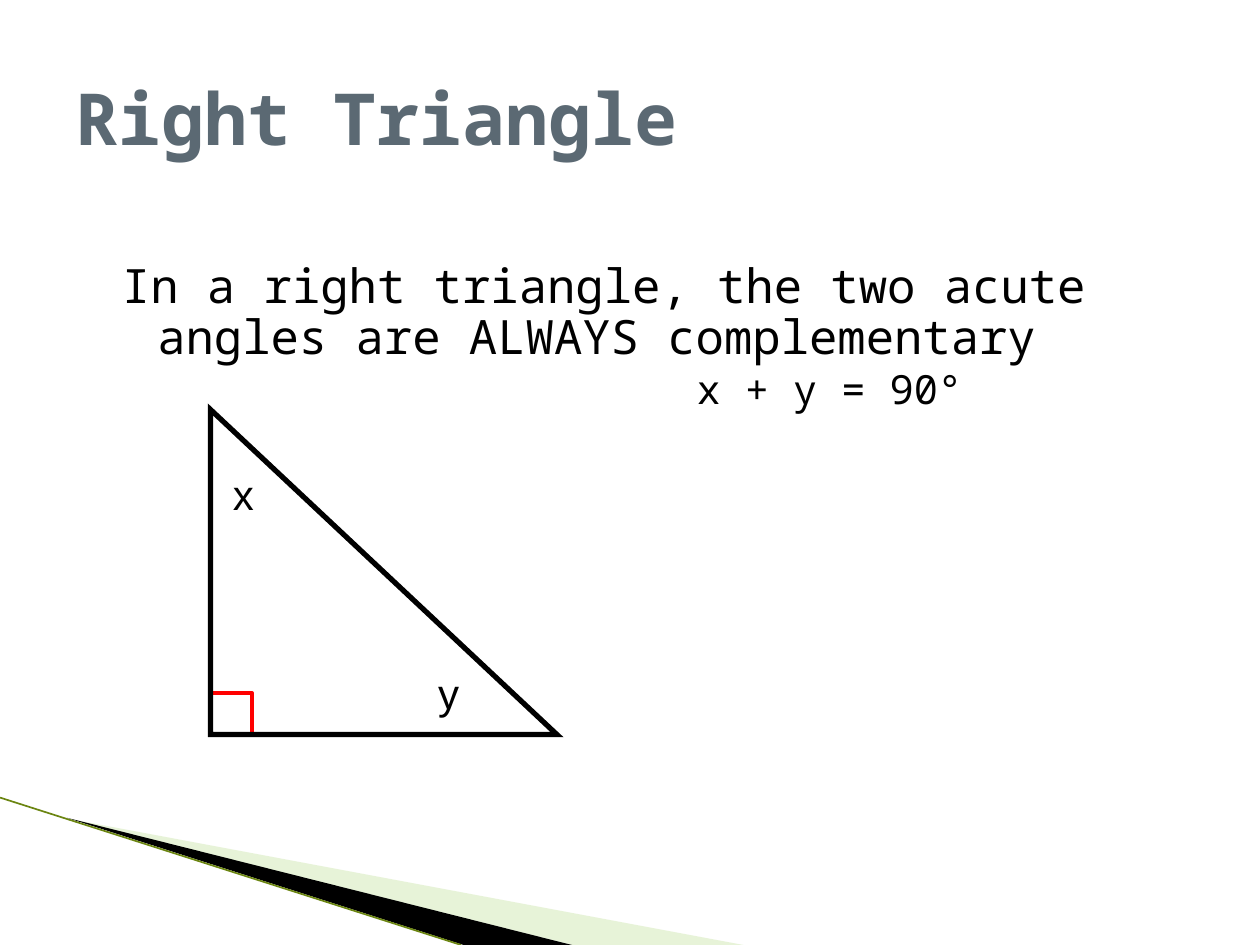
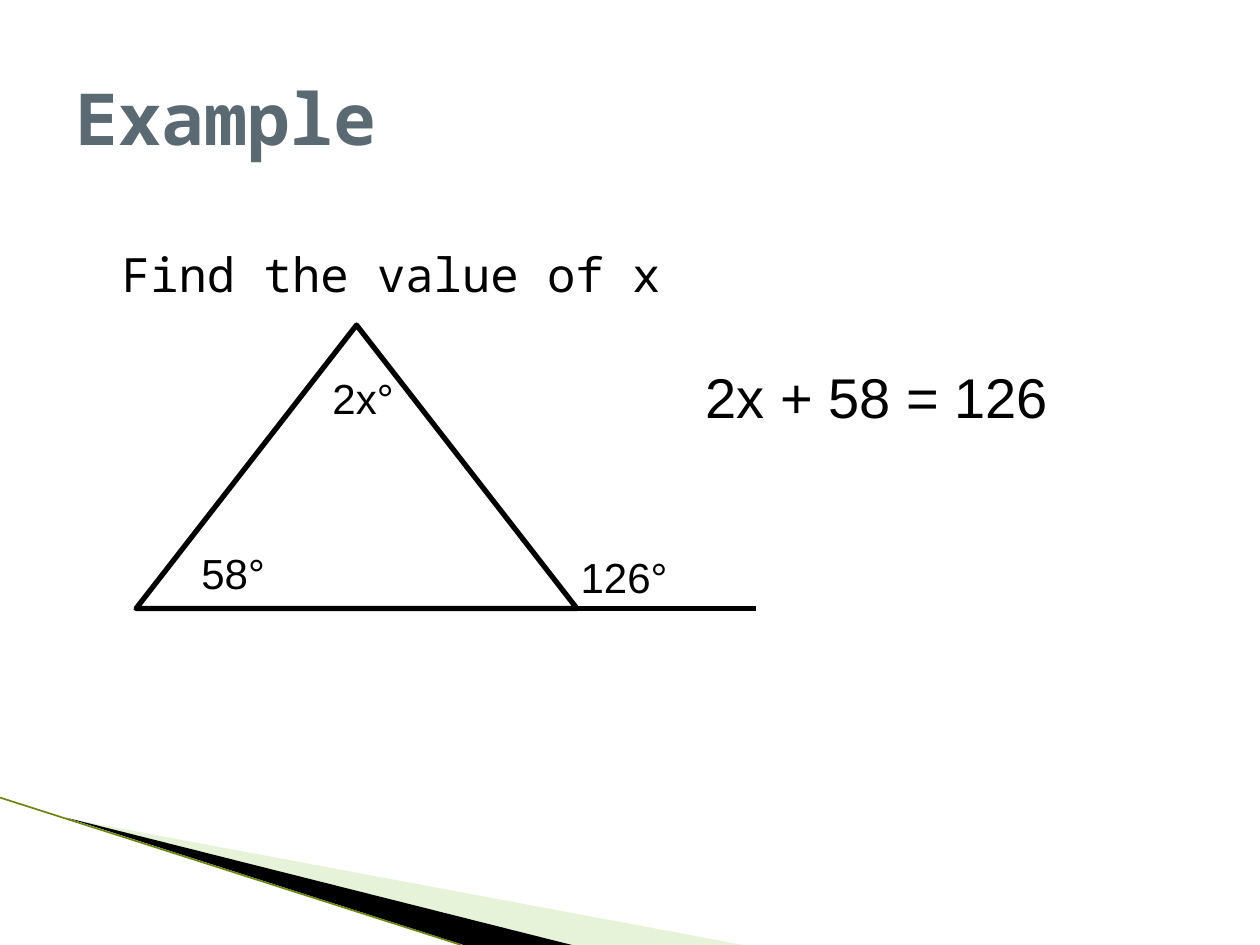
from lxml.etree import SubElement
from pptx import Presentation
from pptx.dml.color import RGBColor
from pptx.enum.shapes import MSO_CONNECTOR as CONNECTOR, MSO_SHAPE as SHAPE
from pptx.enum.text import MSO_ANCHOR as ANCHOR
from pptx.oxml.ns import qn
from pptx.util import Inches, Pt

COLORS = {"text": "000000", "title": "5B6973", "mark": "FF0000",
          "pale": "C5E19F", "band": "000000", "edge": "6B8511"}
MONO, SANS = "Noto Sans Mono", "Arial"


def rgb(name):
    return RGBColor.from_string(COLORS[name])


class Deck:
    """Holds the style and the current slide."""

    def __init__(self):
        self.prs = Presentation()
        self.prs.slide_width, self.prs.slide_height = Inches(10), Inches(7.5)

    def new_slide(self, title):
        self.shapes = self.prs.slides.add_slide(self.prs.slide_layouts[6]).shapes
        # Corner bands
        self.band([(0.55, 6.5), (5.9, 7.5), (4.54, 7.5)], "pale", 40)
        self.band([(0.53, 6.49), (4.54, 7.5), (3.68, 7.5)], "band")
        self.line((0, 6.33), (3.66, 7.5), "edge", 0.95)
        # Title
        heading = self.text(title, 0.5, 0.3, 9, 1.25, 41, MONO, "title", bold=True)
        heading.vertical_anchor = ANCHOR.MIDDLE

    def band(self, points, color, opacity=100):
        corners = [(Inches(x), Inches(y)) for x, y in points]
        builder = self.shapes.build_freeform(*corners[0])
        builder.add_line_segments(corners[1:], close=True)
        band = builder.convert_to_shape()
        band.shadow.inherit = False
        band.line.fill.background()
        band.fill.solid()
        band.fill.fore_color.rgb = rgb(color)
        if opacity < 100:
            fill = band.fill._xPr.find(qn("a:solidFill"))[0]
            SubElement(fill, qn("a:alpha"), val=str(opacity * 1000))

    def line(self, start, end, color="text", width=3):
        line = self.shapes.add_connector(
            CONNECTOR.STRAIGHT, *(Inches(v) for v in start + end))
        line.line.color.rgb = rgb(color)
        line.line.width = Pt(width)
        SubElement(line._element.spPr, qn("a:effectLst"))

    def outline(self, kind, left, top, width, height, color="text", weight=3, miter=False):
        figure = self.shapes.add_shape(
            kind, *map(Inches, (left, top, width, height)))
        figure.fill.background()
        figure.line.color.rgb = rgb(color)
        figure.line.width = Pt(weight)
        if miter:
            SubElement(figure.line._ln, qn("a:miter"), lim="800000")
        figure.shadow.inherit = False

    def style(self, paragraph, size, font, color="text", bold=False):
        for run in paragraph.runs:
            run.font.size, run.font.name, run.font.bold = Pt(size), font, bold
            run.font.color.rgb = rgb(color)

    def text(self, words, left, top, width, height, size=24, font=SANS,
             color="text", bold=False):
        box = self.shapes.add_textbox(*map(Inches, (left, top, width, height)))
        frame = box.text_frame
        frame.word_wrap = True
        frame.text = words
        self.style(frame.paragraphs[0], size, font, color, bold)
        return frame

    def body(self, words, left, top, width, height):
        frame = self.text(words, left, top, width, height, 27, MONO)
        frame.margin_top = Inches(0.09)
        self.indent(frame.paragraphs[0], 0.4, -0.28)
        return frame

    def indent(self, paragraph, left, first=0.0):
        paragraph.line_spacing = 0.89
        props = paragraph._p.get_or_add_pPr()
        props.set("marL", str(Inches(left)))
        props.set("indent", str(Inches(first)))


def right_triangle(deck):
    deck.new_slide("Right Triangle")
    left, base, corner = 1.67, 5.83, 0.33
    deck.outline(SHAPE.RECTANGLE, left, base - corner, corner, corner, "mark", 2.25)

    # Rule and its equation
    rule = deck.body("In a right triangle, the two acute angles are ALWAYS complementary",
                     0.75, 2, 8.5, 2.58)
    equation = rule.add_paragraph()
    equation.text = "x + y = 90°"
    equation.space_before = Pt(3.2)
    deck.indent(equation, 4.68)
    deck.style(equation, 23, MONO)

    # Triangle with its acute angles
    deck.outline(SHAPE.RIGHT_TRIANGLE, left, base - 2.58, 2.75, 2.58, miter=True)
    for angle, x, y in (("x", 1.75, 3.67), ("y", 3.38, 5.25)):
        deck.text(angle, x, y, 0.37, 0.5)


def example(deck):
    deck.new_slide("Example")
    deck.body("Find the value of x", 0.75, 1.91, 5.17, 0.75)

    # Triangle with its base extended
    deck.outline(SHAPE.ISOSCELES_TRIANGLE, 1.08, 2.58, 3.5, 2.25)
    for angle, x, y, width in (("58°", 1.5, 4.3, 0.91), ("2x°", 2.54, 2.91, 0.92),
                               ("126°", 4.51, 4.33, 1.33)):
        deck.text(angle, x, y, width, 0.5)
    deck.line((4.25, 4.83), (6, 4.83))

    # Equation
    deck.text("2x + 58 = 126", 5.5, 2.83, 3.67, 0.64, 32)


def main():
    deck = Deck()
    right_triangle(deck)
    example(deck)
    deck.prs.save("out.pptx")


if __name__ == "__main__":
    main()
